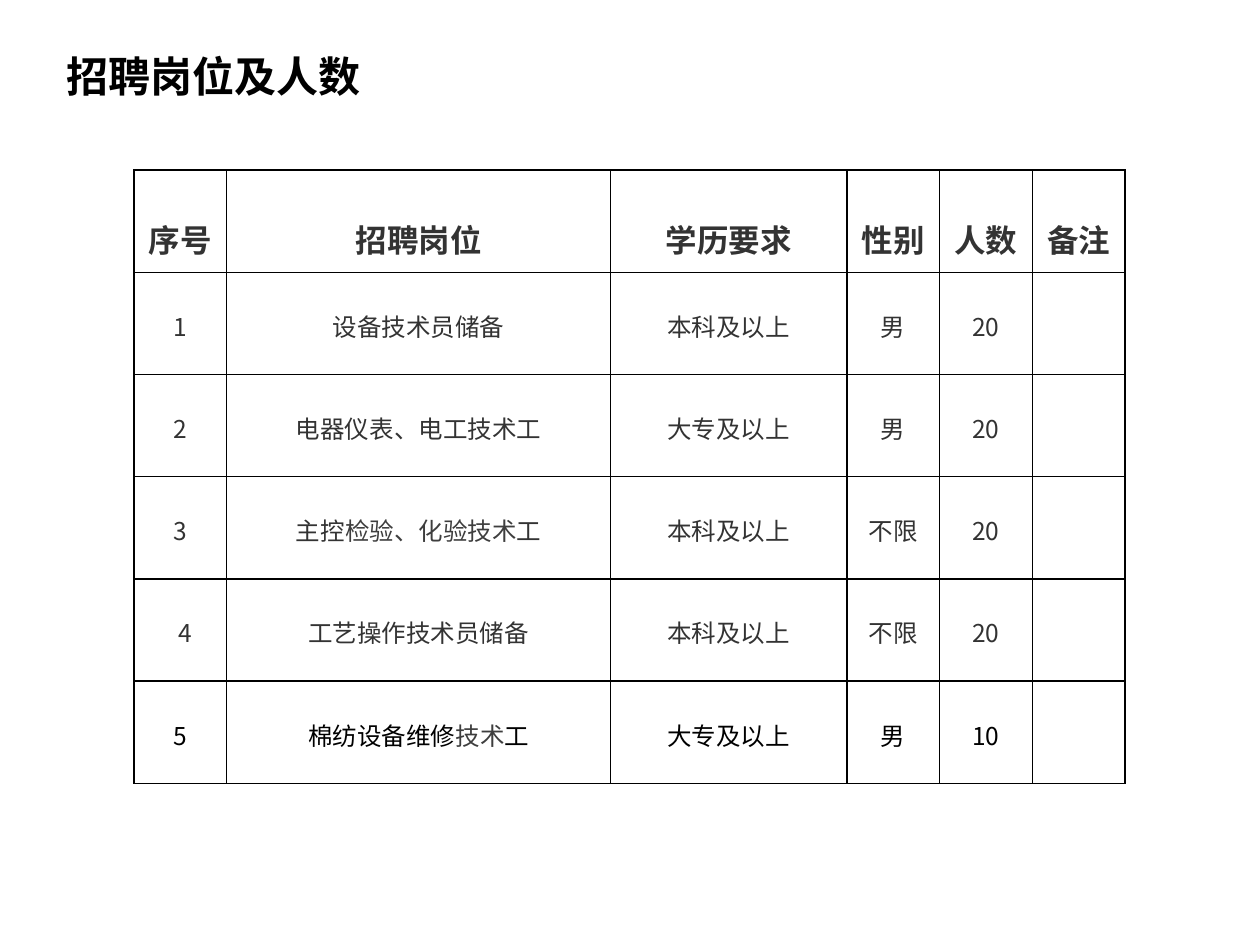
"""Build the slide that lists recruitment posts and head counts."""
from dataclasses import dataclass

import lxml.etree
import pptx
import pptx.dml.color
import pptx.enum.text
import pptx.oxml.ns
import pptx.util

Cm = pptx.util.Cm
Pt = pptx.util.Pt
qn = pptx.oxml.ns.qn


@dataclass(frozen=True)
class Theme:
    """Colours, fonts and sizes of the slide."""

    black: str = "000000"
    ink: str = "333333"
    soft: str = "3E3E3E"
    title_font: str = "Arial"
    table_font: str = "Noto Sans CJK SC"
    title_size: int = 24
    header_size: int = 18
    body_size: int = 14
    border: float = 1
    line_height: float = 1.45


@dataclass(frozen=True)
class Post:
    """One recruitment post; name parts set in the soft colour are marked True."""

    name: tuple[tuple[str, bool], ...]
    education: str
    gender: str
    count: int
    color: str
    number_indent: float = 0


THEME = Theme()
HEADERS = ("序号", "招聘岗位", "学历要求", "性别", "人数", "备注")
COLUMN_WIDTHS = (1.87, 7.74, 4.76, 1.87, 1.87, 1.87)
ROW_HEIGHT = 2.06
POSTS = (
    Post((("设备技术员储备", False),), "本科及以上", "男", 20, THEME.ink),
    Post((("电器仪表、电工技术工", False),), "大专及以上", "男", 20, THEME.ink),
    Post((("主控", False), ("检验、化验技术", True), ("工", False)),
         "本科及以上", "不限", 20, THEME.ink),
    Post((("工艺操作技术员储备", False),), "本科及以上", "不限", 20, THEME.ink, 0.22),
    Post((("棉纺设备维修", False), ("技术", True), ("工", False)),
         "大专及以上", "男", 10, THEME.black),
)


def style_paragraph(paragraph, font: str, size: int, color: str, bold: bool) -> None:
    """Set the font shared by all runs of a paragraph."""
    paragraph.font.name = font
    paragraph.font.size = Pt(size)
    paragraph.font.bold = bold
    paragraph.font.color.rgb = pptx.dml.color.RGBColor.from_string(color)


def frame_cell(cell) -> None:
    """Give a cell plain borders, no fill and its side margins."""
    properties = cell._tc.get_or_add_tcPr()
    for side in ("a:lnL", "a:lnR", "a:lnT", "a:lnB"):
        line = lxml.etree.SubElement(properties, qn(side), w=str(Pt(THEME.border)))
        fill = lxml.etree.SubElement(line, qn("a:solidFill"))
        lxml.etree.SubElement(fill, qn("a:srgbClr"), val=THEME.black)
    cell.fill.background()
    cell.margin_left = cell.margin_right = Cm(0.18)
    cell.margin_top = cell.margin_bottom = 0


def write_cell(cell, parts: tuple[tuple[str, bool], ...], size: int, color: str,
               bold: bool = False) -> None:
    """Write centred text one line below the top of a cell."""
    cell.margin_top = Pt(size * THEME.line_height)
    paragraph = cell.text_frame.paragraphs[0]
    paragraph.alignment = pptx.enum.text.PP_ALIGN.CENTER
    style_paragraph(paragraph, THEME.table_font, size, color, bold)
    for text, is_soft in parts:
        run = paragraph.add_run()
        run.text = text
        if is_soft:
            run.font.color.rgb = pptx.dml.color.RGBColor.from_string(THEME.soft)


def add_title(slide) -> None:
    """Add the slide heading."""
    heading = slide.shapes.add_textbox(Cm(1.09), Cm(0.89), Cm(9.88), Cm(1.27)).text_frame
    heading.word_wrap = True
    paragraph = heading.paragraphs[0]
    paragraph.text = "招聘岗位及人数"
    style_paragraph(paragraph, THEME.title_font, THEME.title_size, THEME.black, True)


def add_posts_table(slide) -> None:
    """Add the table of posts."""
    row_count = len(POSTS) + 1
    posts_table = slide.shapes.add_table(
        row_count, len(HEADERS), Cm(2.7), Cm(3.43),
        Cm(sum(COLUMN_WIDTHS)), Cm(ROW_HEIGHT * row_count)).table
    posts_table.first_row = posts_table.horz_banding = False
    for column, width in zip(posts_table.columns, COLUMN_WIDTHS):
        column.width = Cm(width)
    for row in posts_table.rows:
        row.height = Cm(ROW_HEIGHT)
    for cell in posts_table.iter_cells():
        frame_cell(cell)
    for index, header in enumerate(HEADERS):
        write_cell(posts_table.cell(0, index), ((header, False),),
                   THEME.header_size, THEME.ink, bold=True)
    for number, post in enumerate(POSTS, start=1):
        values = (((str(number), False),), post.name, ((post.education, False),),
                  ((post.gender, False),), ((str(post.count), False),))
        for index, parts in enumerate(values):
            write_cell(posts_table.cell(number, index), parts, THEME.body_size, post.color)
        posts_table.cell(number, 0).margin_left += Cm(post.number_indent)


def main() -> None:
    """Build and save the presentation."""
    presentation = pptx.Presentation()
    presentation.slide_width = Cm(25.4)
    presentation.slide_height = Cm(19.05)
    slide = presentation.slides.add_slide(presentation.slide_layouts[6])
    add_title(slide)
    add_posts_table(slide)
    presentation.save("out.pptx")


if __name__ == "__main__":
    main()
